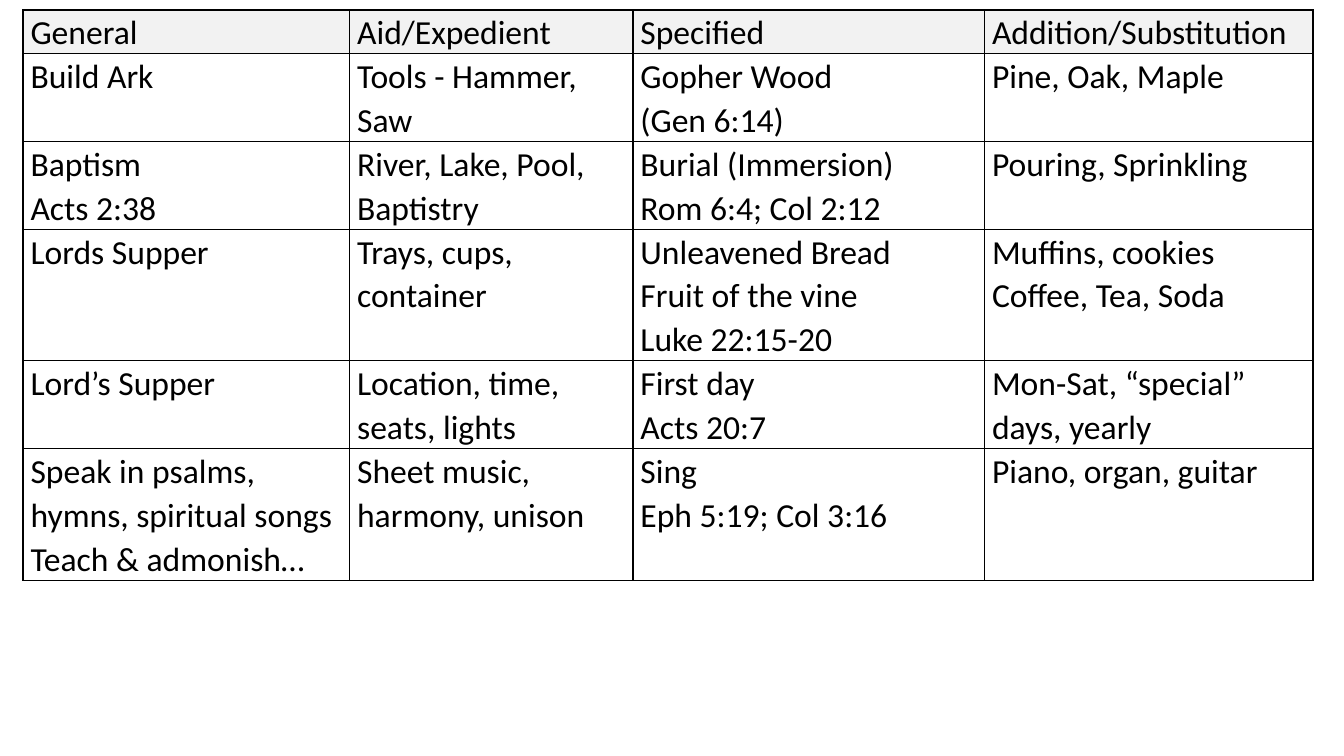
from lxml import etree
from pptx import Presentation
from pptx.dml.color import RGBColor
from pptx.oxml.ns import qn
from pptx.util import Cm, Pt

BLACK = RGBColor(0x00, 0x00, 0x00)
HEADER_GREY = RGBColor(0xF2, 0xF2, 0xF2)
FONT = "Calibri"
COLUMN_SHARES = [8.23, 7.14, 8.86, 8.28]
LINE_HEIGHT = Cm(1.09)

# One tuple per row; a line break inside a cell starts a new paragraph.
AUTHORITY_ROWS = [
    ("General", "Aid/Expedient", "Specified", "Addition/Substitution"),
    ("Build Ark", "Tools - Hammer, Saw", "Gopher Wood\n(Gen 6:14)",
     "Pine, Oak, Maple"),
    ("Baptism\nActs 2:38", "River, Lake, Pool, Baptistry",
     "Burial (Immersion)\nRom 6:4; Col 2:12", "Pouring, Sprinkling"),
    ("Lords Supper", "Trays, cups, container",
     "Unleavened Bread\nFruit of the vine\nLuke 22:15-20",
     "Muffins, cookies\nCoffee, Tea, Soda"),
    ("Lord’s Supper", "Location, time, seats, lights",
     "First day\nActs 20:7", "Mon-Sat, “special” days, yearly"),
    ("Speak in psalms, hymns, spiritual songs\nTeach & admonish…",
     "Sheet music, harmony, unison", "Sing\nEph 5:19; Col 3:16",
     "Piano, organ, guitar"),
]
ROW_LINES = [1, 2, 2, 3, 2, 3]


def set_borders(cell, color, width):
    tc_pr = cell._tc.get_or_add_tcPr()
    for side in ("a:lnL", "a:lnR", "a:lnT", "a:lnB"):
        ln = etree.SubElement(tc_pr, qn(side), w=str(width))
        fill = etree.SubElement(ln, qn("a:solidFill"))
        etree.SubElement(fill, qn("a:srgbClr"), val=str(color))


def write_cell(cell, text):
    cell.margin_left = cell.margin_right = Cm(0.19)
    cell.margin_top = cell.margin_bottom = 0
    tf = cell.text_frame
    for i, line in enumerate(text.split("\n")):
        p = tf.add_paragraph() if i else tf.paragraphs[0]
        p.line_spacing = 1.07
        r = p.add_run()
        r.text = line
        r.font.name = FONT
        r.font.size = Pt(24)
        r.font.bold = False
        r.font.color.rgb = BLACK


def add_authority_table(slide, left, top, width):
    height = LINE_HEIGHT * sum(ROW_LINES)
    table = slide.shapes.add_table(len(AUTHORITY_ROWS), len(COLUMN_SHARES),
                                   left, top, width, height).table
    table.first_row = table.horz_banding = False
    for column, share in zip(table.columns, COLUMN_SHARES):
        column.width = int(width * share / sum(COLUMN_SHARES))
    for i, (row, texts) in enumerate(zip(table.rows, AUTHORITY_ROWS)):
        row.height = LINE_HEIGHT * ROW_LINES[i]
        for cell, text in zip(row.cells, texts):
            write_cell(cell, text)
            set_borders(cell, BLACK, Pt(1))
            if i == 0:
                cell.fill.solid()
                cell.fill.fore_color.rgb = HEADER_GREY
            else:
                cell.fill.background()


def main():
    prs = Presentation()
    prs.slide_width, prs.slide_height = Cm(33.87), Cm(19.05)
    slide = prs.slides.add_slide(prs.slide_layouts[6])
    add_authority_table(slide, Cm(0.58), Cm(0.25), Cm(32.51))
    prs.save("out.pptx")


if __name__ == "__main__":
    main()
